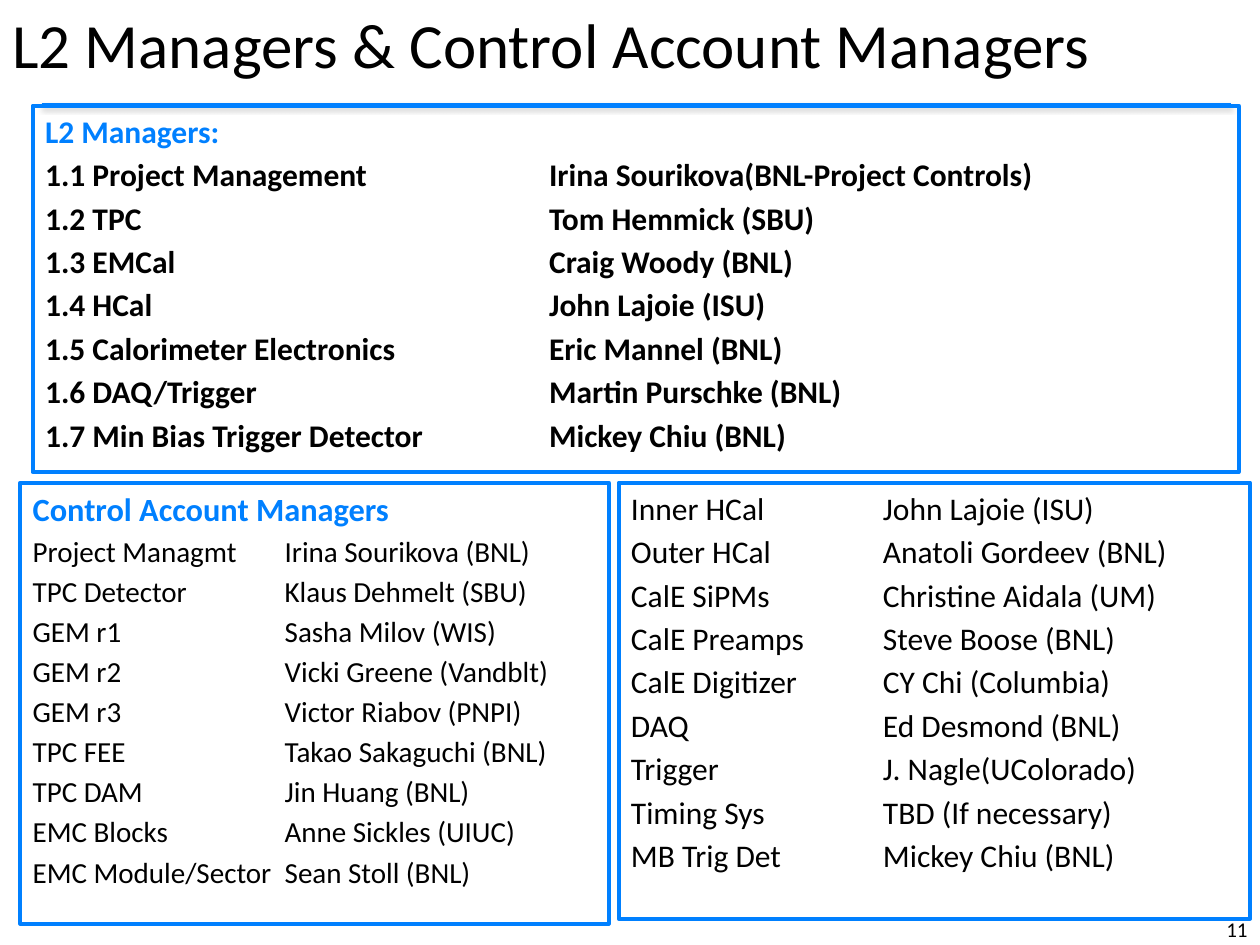
import pptx
import pptx.util
import pptx.dml.color
import pptx.enum.shapes
import pptx.enum.text
import pptx.oxml
import pptx.oxml.ns
import lxml.etree

Cm, Pt = pptx.util.Cm, pptx.util.Pt
Rgb = pptx.dml.color.RGBColor.from_string
qn = pptx.oxml.ns.qn
Anchor = pptx.enum.text.MSO_ANCHOR
Align = pptx.enum.text.PP_ALIGN
hues = {"blue": "0080FF", "black": "000000", "shade": "808080"}

leads = [
    ("1.1 Project Management", "Irina Sourikova(BNL-Project Controls)"),
    ("1.2 TPC", "Tom Hemmick (SBU)"),
    ("1.3 EMCal", "Craig Woody (BNL)"),
    ("1.4 HCal", "John Lajoie (ISU)"),
    ("1.5 Calorimeter Electronics", "Eric Mannel (BNL)"),
    ("1.6 DAQ/Trigger", "Martin Purschke (BNL)"),
    ("1.7 Min Bias Trigger Detector", "Mickey Chiu (BNL)"),
]
first = [
    ("Project Managmt", "Irina Sourikova (BNL)"),
    ("TPC Detector", "Klaus Dehmelt (SBU)"),
    ("GEM r1", "Sasha Milov (WIS)"),
    ("GEM r2", "Vicki Greene (Vandblt)"),
    ("GEM r3", "Victor Riabov (PNPI)"),
    ("TPC FEE", "Takao Sakaguchi (BNL)"),
    ("TPC DAM", "Jin Huang (BNL)"),
    ("EMC Blocks", "Anne Sickles (UIUC)"),
    ("EMC Module/Sector", "Sean Stoll (BNL)"),
]
second = [
    ("Inner HCal", "John Lajoie (ISU)"),
    ("Outer HCal", "Anatoli Gordeev (BNL)"),
    ("CalE SiPMs", "Christine Aidala (UM)"),
    ("CalE Preamps", "Steve Boose (BNL)"),
    ("CalE Digitizer", "CY Chi (Columbia)"),
    ("DAQ", "Ed Desmond (BNL)"),
    ("Trigger", "J. Nagle(UColorado)"),
    ("Timing Sys", "TBD (If necessary)"),
    ("MB Trig Det", "Mickey Chiu (BNL)"),
]


def style(para, size, hue="black", bold=False):
    for run in para.runs:
        run.font.name = "Calibri"
        run.font.size = Pt(size)
        run.font.bold = bold
        run.font.color.rgb = Rgb(hues[hue])


deck = pptx.Presentation()
deck.slide_width, deck.slide_height = Cm(25.4), Cm(19.05)
slide = deck.slides.add_slide(deck.slide_layouts[6])
shapes = slide.shapes

# Rule under the title, with a soft shadow
rule = shapes.add_connector(pptx.enum.shapes.MSO_CONNECTOR.STRAIGHT,
                            Cm(0.84), Cm(2.11), Cm(24.82), Cm(2.11))
rule.line.color.rgb = Rgb(hues["blue"])
rule.line.width = Pt(2.25)
glow = lxml.etree.SubElement(rule._element.spPr, qn("a:effectLst"))
cast = lxml.etree.SubElement(glow, qn("a:outerShdw"), blurRad=str(Pt(3.1)),
                             dist=str(Pt(1.6)), dir="5400000", rotWithShape="0")
tint = lxml.etree.SubElement(cast, qn("a:srgbClr"), val=hues["shade"])
lxml.etree.SubElement(tint, qn("a:alpha"), val="38000")

# Title and page number
labels = [
    ("L2 Managers & Control Account Managers", (0, 0, 25.4, 1.73), 36, Align.LEFT),
    ("11", (23.93, 18.42, 1.47, 0.64), 12, Align.RIGHT),
]
for text, place, size, align in labels:
    frame = shapes.add_textbox(*map(Cm, place)).text_frame
    frame.word_wrap = True
    frame.vertical_anchor = Anchor.MIDDLE
    para = frame.paragraphs[0]
    para.text = text
    para.alignment = align
    style(para, size)

# Framed lists: place, heading, heading size, rows, row size, bold rows, tab stop
panels = [
    ((0.41, 9.73, 11.86, 8.89), "Control Account Managers", 18.5, first, 16.6, False, 5.08),
    ((12.47, 9.73, 12.73, 8.79), None, 18, second, 18, False, 5.08),
    ((0.66, 2.13, 24.31, 7.39), "L2 Managers:", 18, leads, 18, True, 10.16),
]
for place, head, top, rows, size, bold, stop in panels:
    box = shapes.add_shape(pptx.enum.shapes.MSO_SHAPE.RECTANGLE, *map(Cm, place))
    box.shadow.inherit = False
    box.fill.background()
    box.line.color.rgb = Rgb(hues["blue"])
    box.line.width = Pt(2.25)
    lxml.etree.SubElement(box.line._ln, qn("a:round"))
    frame = box.text_frame
    frame.word_wrap = True
    frame.vertical_anchor = Anchor.TOP

    lines = ([head] if head else []) + ["\t".join(row) for row in rows]
    for i, line in enumerate(lines):
        para = frame.paragraphs[0] if i == 0 else frame.add_paragraph()
        para.text = line
        para.alignment = Align.LEFT
        if i:
            para.space_before = Pt(round(size * 0.18, 1))
        if line == head:
            style(para, top, "blue", True)
        else:
            tabs = lxml.etree.SubElement(para._p.get_or_add_pPr(), qn("a:tabLst"))
            lxml.etree.SubElement(tabs, qn("a:tab"), pos=str(Cm(stop)), algn="l")
            style(para, size, bold=bold)

deck.save("out.pptx")
